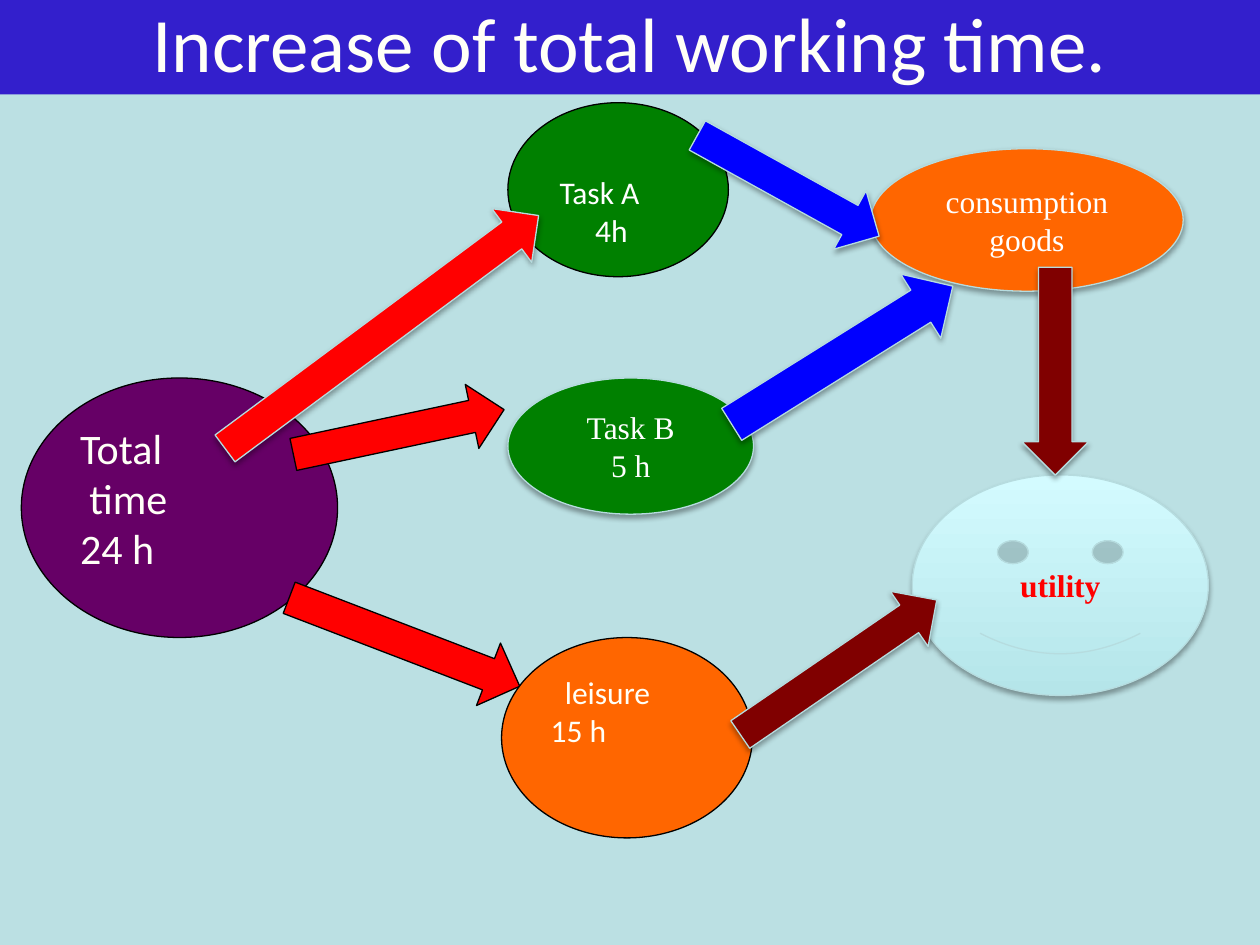
from lxml import etree
from pptx import Presentation
from pptx.dml.color import RGBColor
from pptx.enum.shapes import MSO_SHAPE
from pptx.enum.text import MSO_ANCHOR, MSO_AUTO_SIZE, PP_ALIGN
from pptx.oxml.ns import qn
from pptx.util import Pt

ELLIPSE, ARROW, SMILEY = MSO_SHAPE.OVAL, MSO_SHAPE.RIGHT_ARROW, MSO_SHAPE.SMILEY_FACE
LEFT, CENTER = PP_ALIGN.LEFT, PP_ALIGN.CENTER
TOP, MIDDLE = MSO_ANCHOR.TOP, MSO_ANCHOR.MIDDLE
NO_AUTOFIT = MSO_AUTO_SIZE.NONE

SANS, SERIF = "Calibri", "Times New Roman"
BACKGROUND, BANNER = "BBE0E3", "331FCC"
WHITE, IVORY, BLACK, PALE = "FFFFFF", "FFFFF7", "000000", "B6DCDF"
PURPLE, GREEN, ORANGE = "660066", "008000", "FF6600"
RED, BLUE, MAROON = "FF0000", "0000FF", "800000"
SMILEY_COLORS = ("B5E5E9", "D3FBFF")


def rgb(color):
    return RGBColor.from_string(color)


def set_attributes(target, values):
    for name, value in values.items():
        setattr(target, name, value)


class SlideBuilder:
    line_width = 0.75

    def __init__(self, slide):
        self.slide = slide
        fill = slide.background.fill
        fill.solid()
        fill.fore_color.rgb = rgb(BACKGROUND)

    def place(self, shape, box):
        names = ("left", "top", "width", "height")
        set_attributes(shape, {name: Pt(value) for name, value in zip(names, box)})

    def paint(self, shape, color):
        shape.fill.solid()
        shape.fill.fore_color.rgb = rgb(color)

    def add_text(self, shape, lines, size, font, color, bold=False,
                 align=CENTER, anchor=MIDDLE, inset_top=3.6):
        """Put (text, left indent) lines into a shape."""
        frame = shape.text_frame
        set_attributes(frame, {
            "word_wrap": True, "auto_size": NO_AUTOFIT, "vertical_anchor": anchor,
            "margin_left": Pt(7.2), "margin_right": Pt(7.2),
            "margin_top": Pt(inset_top), "margin_bottom": Pt(3.6)})
        for index, (text, indent) in enumerate(lines):
            paragraph = frame.add_paragraph() if index else frame.paragraphs[0]
            paragraph.alignment = align
            if indent:
                paragraph._p.get_or_add_pPr().set("marL", str(Pt(indent)))
            run = paragraph.add_run()
            run.text = text
            set_attributes(run.font, {"size": Pt(size), "name": font, "bold": bold})
            run.font.color.rgb = rgb(color)

    def title(self, text, box):
        title = self.slide.shapes.title
        self.place(title, box)
        self.paint(title, BANNER)
        self.add_text(title, [(text, 0)], 44, SANS, IVORY)

    def shape(self, kind, box, color, raised):
        """Add a shape, flat with a black edge or raised with a pale one."""
        shape = self.slide.shapes.add_shape(kind, *map(Pt, box))
        self.paint(shape, color)
        shape.line.width = Pt(self.line_width)
        shape.line.color.rgb = rgb(PALE if raised else BLACK)
        shape.shadow.inherit = False
        if raised:
            self.add_shadow(shape)
        return shape

    def add_shadow(self, shape):
        effects = shape._element.spPr.find(qn("a:effectLst"))
        shadow = etree.SubElement(effects, qn("a:outerShdw"), {
            "blurRad": str(Pt(3.1)), "dist": str(Pt(1.8)),
            "dir": "5400000", "rotWithShape": "0"})
        color = etree.SubElement(shadow, qn("a:srgbClr"), val=BLACK)
        etree.SubElement(color, qn("a:alpha"), val="35000")

    def flat_ellipse(self, box, color, lines, size, text_color, inset_top=3.6):
        shape = self.shape(ELLIPSE, box, color, False)
        self.add_text(shape, lines, size, SANS, text_color,
                      align=LEFT, anchor=TOP, inset_top=inset_top)

    def raised_ellipse(self, box, color, lines):
        shape = self.shape(ELLIPSE, box, color, True)
        self.add_text(shape, [(line, 0) for line in lines], 18, SERIF, WHITE)

    def smiley(self, box, text):
        shape = self.shape(SMILEY, box, PALE, True)
        shape.fill.gradient()
        shape.fill.gradient_angle = 90
        for position, (stop, color) in enumerate(zip(shape.fill.gradient_stops, SMILEY_COLORS)):
            stop.position = position
            stop.color.rgb = rgb(color)
        self.add_text(shape, [(text, 0)], 18, SERIF, RED, bold=True)

    def arrow(self, box, rotation, color, raised=True):
        self.shape(ARROW, box, color, raised).rotation = rotation


def main():
    presentation = Presentation()
    presentation.slide_width, presentation.slide_height = Pt(720), Pt(540)
    title_only = presentation.slide_layouts[5]
    builder = SlideBuilder(presentation.slides.add_slide(title_only))

    builder.title("Increase of total working time.", (0, -5.8, 720, 59.8))

    # Time budget, first task and leisure
    builder.flat_ellipse((12.2, 216, 180.7, 148.3), PURPLE,
                         [("Total", 0), ("time", 5.4), ("24 h", 0)], 24, IVORY)
    builder.arrow((166.3, 228.2, 123.1, 37.4), 348, RED, raised=False)
    builder.flat_ellipse((290.2, 58.7, 126, 99.4), GREEN,
                         [("Task A", 4), ("4h", 24.4)], 18, WHITE, inset_top=25.5)
    builder.arrow((160.6, 347.8, 141.1, 38.2), 21, RED, raised=False)
    builder.flat_ellipse((286.6, 364.3, 143.3, 114.5), ORANGE,
                         [("leisure", 8.1), ("15 h", 0)], 18, IVORY)

    # Utility, second task and consumption
    builder.smiley((521.3, 271.4, 169.2, 126), "utility")
    builder.arrow((106.6, 170.6, 223.2, 38.2), 323.4, RED)
    builder.raised_ellipse((290.2, 216, 140.4, 77.8), GREEN, ["Task B", "5 h"])
    builder.raised_ellipse((497.5, 85, 178.6, 81.4), ORANGE, ["consumption goods"])

    # Arrows to consumption goods and to utility
    for box, rotation, color in (
            ((391, 87.1, 118.8, 38.2), 29, BLUE),
            ((406.8, 181.4, 149, 43.2), 328, BLUE),
            ((543.6, 193, 118.8, 38.2), 90, MAROON),
            ((411.1, 362.2, 136.1, 38.2), 325.6, MAROON)):
        builder.arrow(box, rotation, color)

    presentation.save("out.pptx")


if __name__ == "__main__":
    main()
